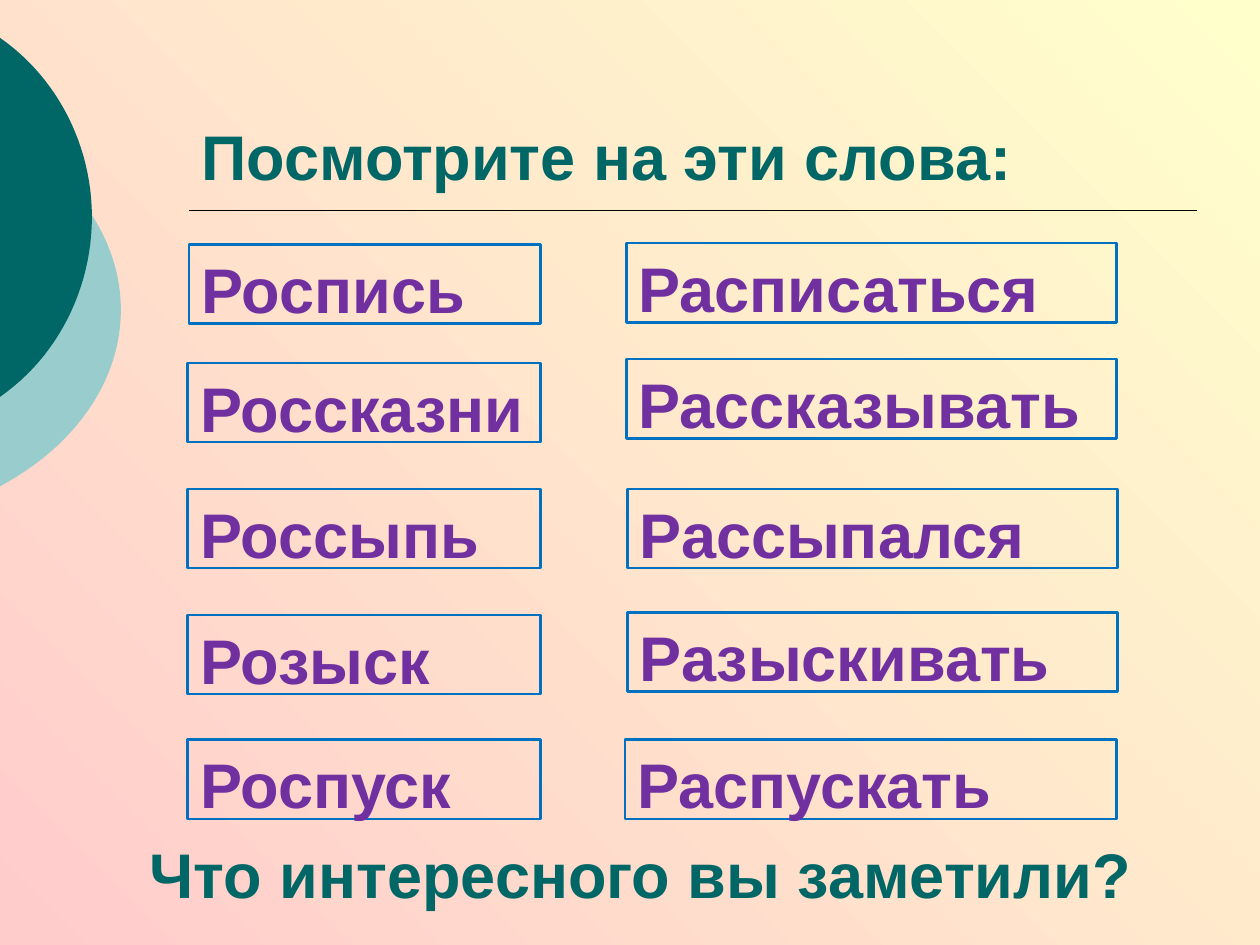
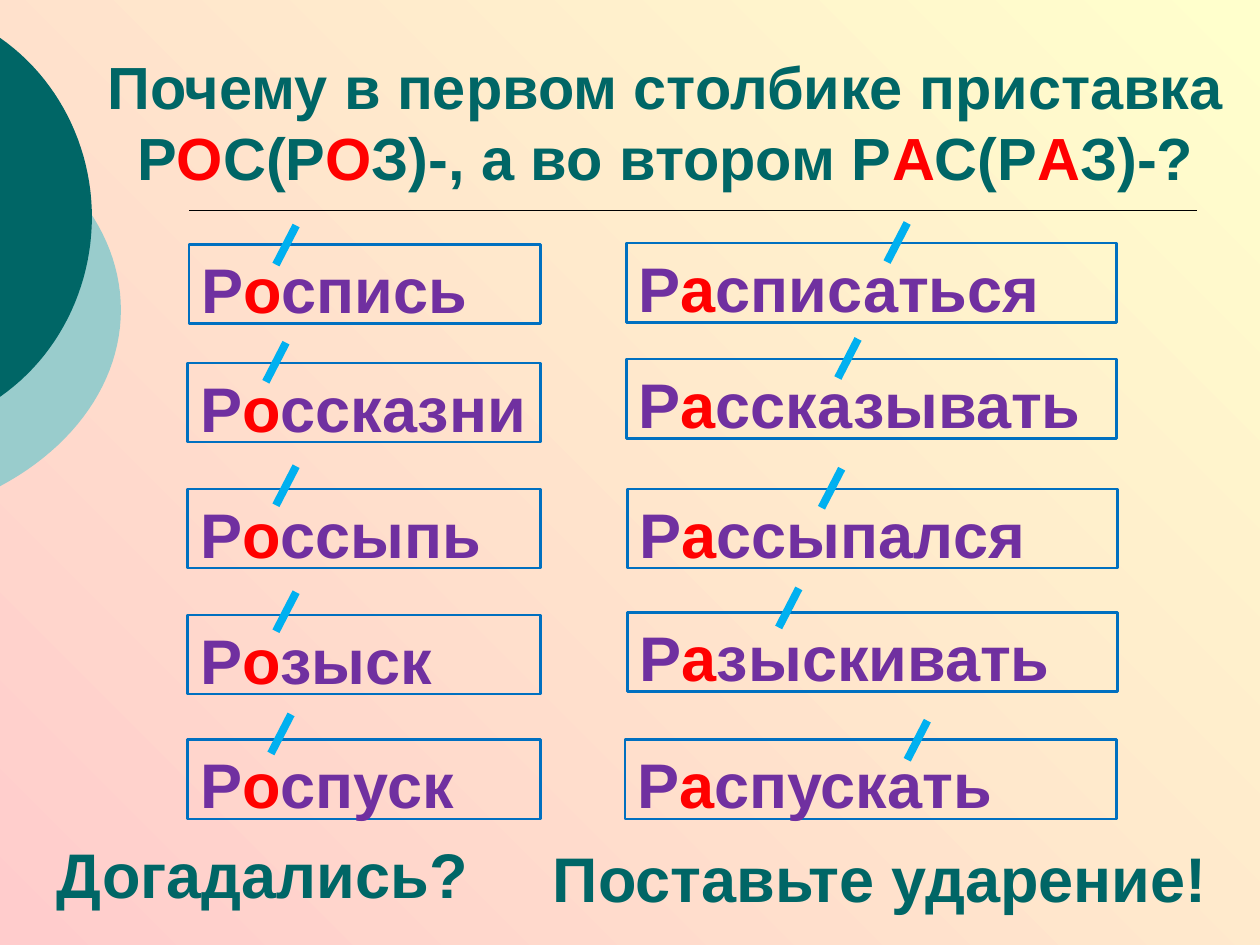
from lxml import etree
from pptx import Presentation
from pptx.dml.color import RGBColor
from pptx.enum.shapes import MSO_CONNECTOR, MSO_SHAPE
from pptx.enum.text import MSO_ANCHOR, PP_ALIGN
from pptx.oxml.ns import qn
from pptx.util import Inches, Pt

LINE = MSO_CONNECTOR.STRAIGHT
RECTANGLE = MSO_SHAPE.RECTANGLE
TOP, BOTTOM = MSO_ANCHOR.TOP, MSO_ANCHOR.BOTTOM
LEFT, CENTER = PP_ALIGN.LEFT, PP_ALIGN.CENTER

FONT = "Arial"
PINK = RGBColor(0xFF, 0xCC, 0xCC)
CREAM = RGBColor(0xFF, 0xFF, 0xCC)
TEAL = RGBColor(0x00, 0x66, 0x66)
PALE_TEAL = RGBColor(0x99, 0xCC, 0xCC)
BLACK = RGBColor(0x00, 0x00, 0x00)
PURPLE = RGBColor(0x70, 0x30, 0xA0)
RED = RGBColor(0xFF, 0x00, 0x00)
FRAME_BLUE = RGBColor(0x00, 0x70, 0xC0)
STRESS_BLUE = RGBColor(0x00, 0xB0, 0xF0)

# Content: letters between asterisks are highlighted in red
WORDS = [  # word, (left, top, width) of its frame, upper end of its stress mark
    ("Р*о*спись", (1.5, 1.94, 2.79), (2.35, 1.79)),
    ("Р*а*списаться", (4.97, 1.93, 3.89), (7.2, 1.77)),
    ("Р*о*ссказни", (1.49, 2.88, 2.8), (2.27, 2.72)),
    ("Р*а*ссказывать", (4.97, 2.85, 3.89), (6.81, 2.69)),
    ("Р*о*ссыпь", (1.49, 3.88, 2.8), (2.35, 3.7)),
    ("Р*а*ссыпался", (4.98, 3.88, 3.89), (6.68, 3.72)),
    ("Р*о*зыск", (1.49, 4.88, 2.8), (2.35, 4.7)),
    ("Р*а*зыскивать", (4.98, 4.86, 3.89), (6.34, 4.67)),
    ("Р*о*спуск", (1.49, 5.87, 2.8), (2.31, 5.67)),
    ("Р*а*спускать", (4.96, 5.87, 3.9), (7.36, 5.72)),
]
SLIDES = [
    {
        "title": "Посмотрите на эти слова:",
        "title_box": (1.5, 0.76, 8, 0.82),
        "title_format": {},
        "questions": [("Что интересного вы заметили?", (1.09, 6.46, 8, 0.82))],
        "show_answers": False,
    },
    {
        "title": "Почему в первом столбике приставка "
                 "Р*О*С(Р*О*З)-, а во втором Р*А*С(Р*А*З)-?",
        "title_box": (0.67, 0.22, 9.22, 1.36),
        "title_format": {"size": 34, "align": CENTER},
        "questions": [
            ("Догадались?", (0.35, 6.46, 3.67, 0.82)),
            ("Поставьте ударение!", (4.29, 6.49, 5.51, 0.82)),
        ],
        "show_answers": True,
    },
]

# Discs cut by the left edge: colour and the cubic curves of the rim
DISCS = [
    (PALE_TEAL, [((0, 1.06), (0.6, 1.38), (0.96, 1.9), (0.96, 2.46)),
                 ((0.96, 2.46), (0.96, 3.02), (0.6, 3.54), (0, 3.86))]),
    (TEAL, [((0, 0.3), (0.46, 0.62), (0.73, 1.16), (0.73, 1.72)),
            ((0.73, 1.72), (0.73, 2.29), (0.46, 2.83), (0, 3.15))]),
]
CURVE_STEPS = 24
FRAME_HEIGHT = 0.63
STRESS_WIDTH, STRESS_HEIGHT = 0.16, 0.31


def write_text(shape, text, size=36, color=TEAL, align=LEFT, anchor=BOTTOM,
               space_before=0):
    frame = shape.text_frame
    frame.word_wrap = True
    frame.vertical_anchor = anchor
    paragraph = frame.paragraphs[0]
    paragraph.alignment = align
    paragraph.space_before = Pt(space_before)
    for index, part in enumerate(text.split("*")):
        run = paragraph.add_run()
        run.text = part
        run.font.name = FONT
        run.font.size = Pt(size)
        run.font.bold = True
        run.font.color.rgb = RED if index % 2 else color


def add_text(slide, text, box, **text_format):
    shape = slide.shapes.add_textbox(*map(Inches, box))
    write_text(shape, text, **text_format)


def add_line(slide, start, end, color, width):
    line = slide.shapes.add_connector(LINE, *map(Inches, start + end))
    line.line.color.rgb = color
    line.line.width = Pt(width)
    etree.SubElement(line._element.spPr, qn("a:effectLst"))


def curve_point(curve, step):
    t = step / CURVE_STEPS
    weights = ((1 - t) ** 3, 3 * t * (1 - t) ** 2, 3 * t * t * (1 - t), t ** 3)
    return tuple(Inches(sum(weight * point[axis]
                            for weight, point in zip(weights, curve)))
                 for axis in (0, 1))


def add_disc(slide, color, curves):
    points = [curve_point(curve, step)
              for curve in curves for step in range(CURVE_STEPS + 1)]
    builder = slide.shapes.build_freeform(*points[0])
    builder.add_line_segments(points[1:], close=True)
    disc = builder.convert_to_shape()
    disc.shadow.inherit = False
    disc.fill.solid()
    disc.fill.fore_color.rgb = color
    disc.line.fill.background()


def add_backdrop(slide):
    fill = slide.background.fill
    fill.gradient()
    fill.gradient_angle = 45
    for position, (stop, color) in enumerate(zip(fill.gradient_stops, (PINK, CREAM))):
        stop.position = position
        stop.color.rgb = color
    for color, curves in DISCS:
        add_disc(slide, color, curves)
    add_line(slide, (1.5, 1.67), (9.5, 1.67), BLACK, 1)


def add_word(slide, word, frame):
    shape = slide.shapes.add_shape(RECTANGLE, *map(Inches, frame + (FRAME_HEIGHT,)))
    shape.shadow.inherit = False
    shape.fill.background()
    shape.line.color.rgb = FRAME_BLUE
    shape.line.width = Pt(1.5)
    write_text(shape, word, color=PURPLE, anchor=TOP, space_before=4.3)


def add_slide(presentation, content):
    slide = presentation.slides.add_slide(presentation.slide_layouts[6])
    add_backdrop(slide)
    add_text(slide, content["title"], content["title_box"], **content["title_format"])
    for word, frame, _ in WORDS:
        add_word(slide, word if content["show_answers"] else word.replace("*", ""), frame)
    for question, box in content["questions"]:
        add_text(slide, question, box)
    # Stress marks lie above the frames
    if content["show_answers"]:
        for _, _, (x, y) in WORDS:
            add_line(slide, (x, y), (x - STRESS_WIDTH, y + STRESS_HEIGHT), STRESS_BLUE, 4.5)


def main():
    presentation = Presentation()
    presentation.slide_width = Inches(10)
    presentation.slide_height = Inches(7.5)
    for content in SLIDES:
        add_slide(presentation, content)
    presentation.save("out.pptx")


if __name__ == "__main__":
    main()
